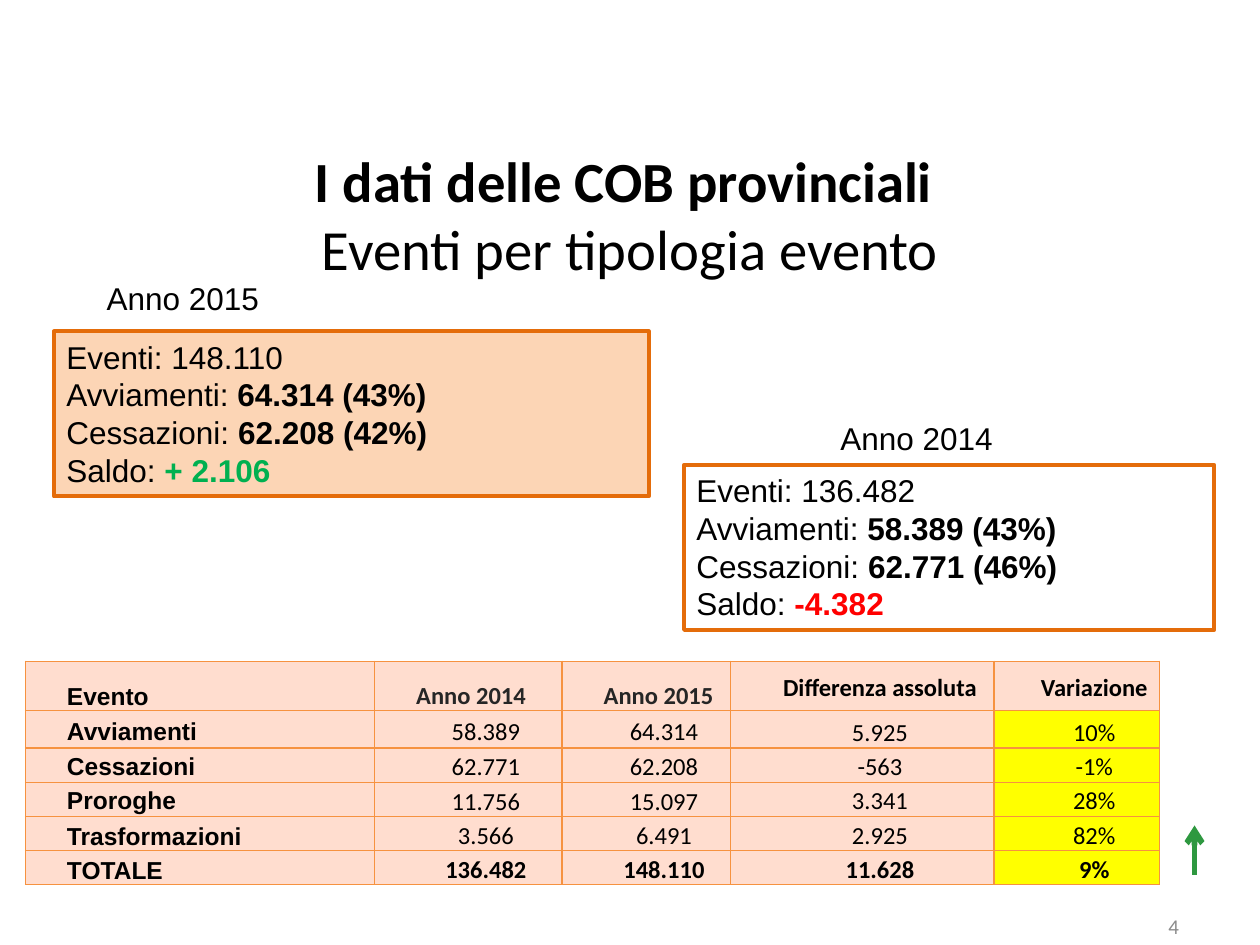
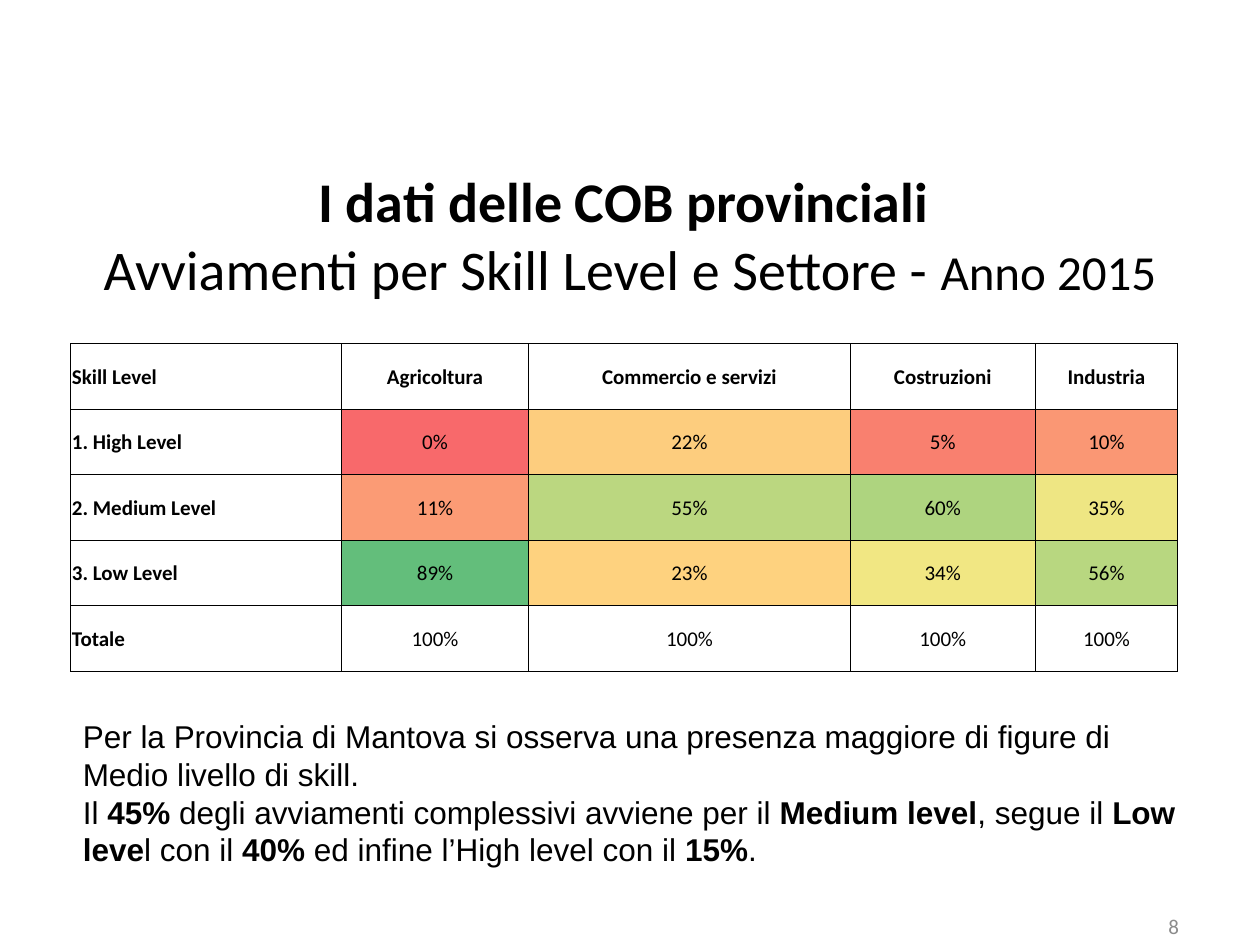
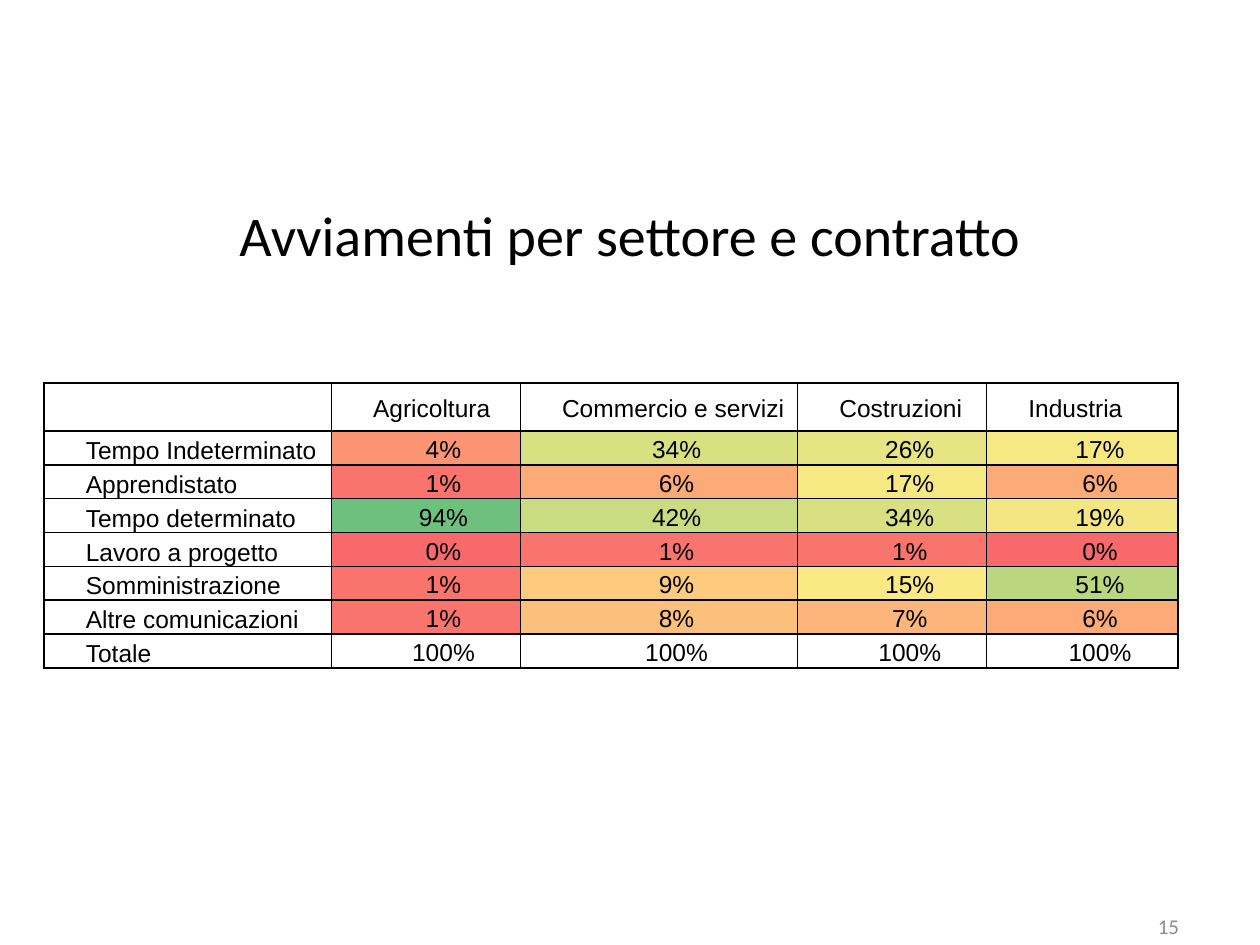
from dataclasses import dataclass, field
from typing import Any, Callable, NamedTuple

from lxml.etree import SubElement
from pptx import Presentation
from pptx.dml.color import RGBColor
from pptx.enum.shapes import MSO_CONNECTOR, MSO_SHAPE
from pptx.enum.text import MSO_ANCHOR, PP_ALIGN
from pptx.oxml.ns import qn
from pptx.util import Cm, Pt

BLACK = RGBColor(0x00, 0x00, 0x00)
WHITE = RGBColor(0xFF, 0xFF, 0xFF)
CHARCOAL = RGBColor(0x26, 0x26, 0x26)
GREY = RGBColor(0x8C, 0x8C, 0x8C)
ORANGE = RGBColor(0xE4, 0x6C, 0x0A)
ORANGE_EDGE = RGBColor(0xF6, 0x92, 0x40)
PEACH = RGBColor(0xFC, 0xD5, 0xB5)
PALE_PEACH = RGBColor(0xFF, 0xDD, 0xCF)
BRIGHT_YELLOW = RGBColor(0xFF, 0xFF, 0x00)
GAIN = RGBColor(0x00, 0xB0, 0x50)
LOSS = RGBColor(0xFF, 0x00, 0x00)
ARROW_GREEN = RGBColor(0x2E, 0x98, 0x40)
HEAT_LOW = RGBColor(0xF8, 0x69, 0x6B)
HEAT_MID = RGBColor(0xFF, 0xEB, 0x84)
HEAT_HIGH = RGBColor(0x63, 0xBE, 0x7B)

HEADING = "Calibri"
BODY = "Arial"
COMMON_TITLE = "I dati delle COB provinciali "
SECTORS = ["Agricoltura", "Commercio e servizi", "Costruzioni", "Industria"]


class Span(NamedTuple):
    """A stretch of text with its own weight, colour and size."""

    text: str
    bold: bool = False
    color: RGBColor = BLACK
    size: float = 18


class Frame(NamedTuple):
    """A place on the slide in centimetres."""

    left: float
    top: float
    width: float
    height: float


@dataclass(frozen=True)
class CellLook:
    """The formatting of one table cell."""

    fill: RGBColor = WHITE
    font: str = BODY
    bold: bool = False
    color: RGBColor = BLACK
    align: PP_ALIGN = PP_ALIGN.CENTER
    anchor: MSO_ANCHOR = MSO_ANCHOR.MIDDLE


@dataclass(frozen=True)
class Grid:
    """A table's place, measures and contents."""

    left: float
    top: float
    widths: list[float]
    heights: list[float]
    rows: list[list[str]]
    edge: RGBColor
    edge_width: float
    size: float = 14
    indent: float = 0.71
    spacing: float = 1.15
    margins: dict[str, Any] = field(default_factory=lambda: {
        "margin_left": Cm(0.13), "margin_right": Cm(0.13), "margin_top": 0, "margin_bottom": 0})


@dataclass(frozen=True)
class YearSummary:
    """The yearly figures shown in a framed box under a caption."""

    caption: str
    caption_at: Frame
    box_at: Frame
    fill: RGBColor
    events: str
    hires: str
    exits: str
    balance: Span


def apply(target: Any, values: dict[str, Any]) -> None:
    """Set every attribute named in values on target."""
    for name, value in values.items():
        setattr(target, name, value)


def write_spans(paragraph: Any, spans: list[Span], font: str) -> None:
    """Append the spans to a paragraph."""
    for span in spans:
        run = paragraph.add_run()
        run.text = span.text
        apply(run.font, {"name": font, "size": Pt(span.size), "bold": span.bold})
        run.font.color.rgb = span.color


def write_paragraphs(text_frame: Any, paragraphs: list[list[Span]], font: str = BODY,
                     align: PP_ALIGN = PP_ALIGN.LEFT, anchor: MSO_ANCHOR = MSO_ANCHOR.TOP) -> None:
    """Fill a text frame with paragraphs of spans."""
    apply(text_frame, {"word_wrap": True, "vertical_anchor": anchor})
    for index, spans in enumerate(paragraphs):
        paragraph = text_frame.add_paragraph() if index else text_frame.paragraphs[0]
        paragraph.alignment = align
        write_spans(paragraph, spans, font)


def add_text(slide: Any, at: Frame, paragraphs: list[list[Span]], **layout: Any) -> Any:
    """Place a text box and return its text frame."""
    text_frame = slide.shapes.add_textbox(*map(Cm, at)).text_frame
    write_paragraphs(text_frame, paragraphs, **layout)
    return text_frame


def add_title(slide: Any, lines: list[list[Span]], height: float = 3.2) -> None:
    """Place the centred title, its lines parted by line breaks."""
    text_frame = add_text(slide, Frame(1.27, 3.12, 22.86, height), [lines[0]], font=HEADING,
                          align=PP_ALIGN.CENTER, anchor=MSO_ANCHOR.MIDDLE)
    for spans in lines[1:]:
        text_frame.paragraphs[0].add_line_break()
        write_spans(text_frame.paragraphs[0], spans, HEADING)


def add_page_number(slide: Any, number: int) -> None:
    """Place the page number at the lower right."""
    add_text(slide, Frame(20.9, 18.31, 3.12, 0.74), [[Span(str(number), color=GREY, size=12)]],
             font=HEADING, align=PP_ALIGN.RIGHT, anchor=MSO_ANCHOR.MIDDLE)


def add_edges(cell: Any, color: RGBColor, width: float) -> None:
    """Draw the four borders of a cell."""
    properties = cell._tc.get_or_add_tcPr()
    for side in ("a:lnL", "a:lnR", "a:lnT", "a:lnB"):
        line = SubElement(properties, qn(side), w=str(Pt(width)))
        SubElement(SubElement(line, qn("a:solidFill")), qn("a:srgbClr"), val=str(color))


def add_grid(slide: Any, grid: Grid, look_at: Callable[[int, int], CellLook]) -> None:
    """Draw a table whose cells look as look_at tells."""
    table = slide.shapes.add_table(
        len(grid.heights), len(grid.widths), Cm(grid.left), Cm(grid.top),
        Cm(sum(grid.widths)), Cm(sum(grid.heights))).table
    apply(table, {"first_row": False, "horz_banding": False})
    for column, width in zip(table.columns, grid.widths):
        column.width = Cm(width)
    for row, height in zip(table.rows, grid.heights):
        row.height = Cm(height)
    for row_index, texts in enumerate(grid.rows):
        for column_index, text in enumerate(texts):
            cell = table.cell(row_index, column_index)
            look = look_at(row_index, column_index)
            add_edges(cell, grid.edge, grid.edge_width)
            cell.fill.solid()
            cell.fill.fore_color.rgb = look.fill
            apply(cell, {**grid.margins, "vertical_anchor": look.anchor})
            paragraph = cell.text_frame.paragraphs[0]
            apply(paragraph, {"alignment": look.align, "line_spacing": grid.spacing})
            paragraph._p.get_or_add_pPr().set("indent", str(Cm(grid.indent)))
            if text:
                write_spans(paragraph, [Span(text, look.bold, look.color, grid.size)], look.font)


def percent(text: str) -> int:
    """Read a percentage as a number."""
    return int(text.rstrip("%"))


def heat_scale(rows: list[list[str]]) -> Callable[[str], RGBColor]:
    """Return a red, yellow and green scale centred on the median of the rows."""
    values = sorted(percent(text) for row in rows for text in row[1:])
    low, high = values[0], values[-1]
    middle = (values[(len(values) - 1) // 2] + values[len(values) // 2]) / 2

    def shade(text: str) -> RGBColor:
        """Blend the two scale colours around a value."""
        value = percent(text)
        if value < middle:
            start, end, share = HEAT_LOW, HEAT_MID, (value - low) / (middle - low)
        else:
            start, end, share = HEAT_MID, HEAT_HIGH, (value - middle) / (high - middle)
        return RGBColor(*(round(a + (b - a) * share) for a, b in zip(start, end)))

    return shade


def add_year_summary(slide: Any, year: YearSummary) -> None:
    """Draw the framed figures of a year and their caption."""
    box = slide.shapes.add_shape(MSO_SHAPE.RECTANGLE, *map(Cm, year.box_at))
    box.shadow.inherit = False
    box.fill.solid()
    box.fill.fore_color.rgb = year.fill
    box.line.color.rgb = ORANGE
    box.line.width = Pt(2.25)
    write_paragraphs(box.text_frame, [
        [Span(f"Eventi: {year.events}")],
        [Span("Avviamenti: "), Span(year.hires, True)],
        [Span("Cessazioni: "), Span(year.exits, True)],
        [Span("Saldo: "), year.balance],
    ])
    add_text(slide, year.caption_at, [[Span(year.caption)]])


def add_growth_arrow(slide: Any) -> None:
    """Draw the upward arrow beside the total."""
    arrow = slide.shapes.add_connector(
        MSO_CONNECTOR.STRAIGHT, Cm(24.08), Cm(17.63), Cm(24.08), Cm(16.64))
    arrow.line.color.rgb = ARROW_GREEN
    arrow.line.width = Pt(3.25)
    SubElement(arrow.line._get_or_add_ln(), qn("a:tailEnd"), type="arrow")
    SubElement(arrow._element.spPr, qn("a:effectLst"))


def build_events(slide: Any) -> None:
    """Build the slide on events by type."""
    add_title(slide, [[Span(COMMON_TITLE, True, size=32.4)],
                      [Span("Eventi per tipologia evento", size=32.4)]], height=2.39)
    grid = Grid(0.51, 13.33, [7.04, 3.78, 3.4, 5.31, 3.33], [1, 0.75] + [0.69] * 4, [
        ["Evento", "Anno 2014", "Anno 2015", "Differenza assoluta", "Variazione"],
        ["Avviamenti", "58.389", "64.314", "5.925", "10%"],
        ["Cessazioni", "62.771", "62.208", "-563", "-1%"],
        ["Proroghe", "11.756", "15.097", "3.341", "28%"],
        ["Trasformazioni", "3.566", "6.491", "2.925", "82%"],
        ["TOTALE", "136.482", "148.110", "11.628", "9%"],
    ], ORANGE_EDGE, 0.75)
    total_row = len(grid.rows) - 1

    def look_at(row: int, column: int) -> CellLook:
        """Tell the look of an event cell."""
        header, label, year = row == 0, column == 0, column in (1, 2)
        low = (column < 3) if header else (column > 2 or label and row >= total_row - 1)
        return CellLook(
            fill=BRIGHT_YELLOW if column == 4 and not header else PALE_PEACH,
            font=BODY if label else HEADING,
            bold=header or label or row == total_row,
            color=CHARCOAL if header and year else BLACK,
            align=PP_ALIGN.LEFT if label or header and year else PP_ALIGN.CENTER,
            anchor=MSO_ANCHOR.BOTTOM if low else MSO_ANCHOR.MIDDLE)

    add_grid(slide, grid, look_at)
    add_growth_arrow(slide)
    for year in (
        YearSummary("Anno 2014", Frame(16.69, 8.33, 4.19, 1.02), Frame(13.79, 9.37, 10.69, 3.33),
                    WHITE, "136.482", "58.389 (43%)", "62.771 (46%)", Span("-4.382", True, LOSS)),
        YearSummary("Anno 2015", Frame(1.9, 5.51, 4.19, 1.02), Frame(1.09, 6.68, 11.99, 3.33),
                    PEACH, "148.110", "64.314 (43%)", "62.208 (42%)", Span("+ 2.106", True, GAIN)),
    ):
        add_year_summary(slide, year)


def build_skills(slide: Any) -> None:
    """Build the slide on skill levels by sector."""
    add_title(slide, [[Span(COMMON_TITLE, True, size=32)],
                      [Span("Avviamenti per Skill Level e Settore - ", size=32),
                       Span("Anno 2015", size=28)]])
    add_text(slide, Frame(1.42, 14.33, 22.81, 3.33), [
        [Span("Per la Provincia di Mantova si osserva una presenza maggiore di figure di "
              "Medio livello di skill.")],
        [Span("Il "), Span("45% ", True), Span("degli avviamenti complessivi avviene per il "),
         Span("Medium level", True), Span(", segue il "), Span("Low leve", True),
         Span("l con il "), Span("40%", True), Span(" ed infine l’High level con il "),
         Span("15%", True), Span(".")],
    ])
    grid = Grid(1.42, 6.93, [5.46, 3.78, 6.48, 3.73, 2.87], [1.32] * 5, [
        ["Skill Level", *SECTORS],
        ["1. High Level", "0%", "22%", "5%", "10%"],
        ["2. Medium Level", "11%", "55%", "60%", "35%"],
        ["3. Low Level", "89%", "23%", "34%", "56%"],
        ["Totale"] + ["100%"] * 4,
    ], BLACK, 0.5, size=12, indent=0, spacing=1.0, margins={
        "margin_left": Cm(0.03), "margin_right": Cm(0.03), "margin_top": Cm(0.03),
        "margin_bottom": 0})
    shade = heat_scale(grid.rows[1:-1])

    def look_at(row: int, column: int) -> CellLook:
        """Tell the look of a skill cell."""
        heated = column > 0 and 0 < row < len(grid.rows) - 1
        return CellLook(
            fill=shade(grid.rows[row][column]) if heated else WHITE,
            font=HEADING,
            bold=row == 0 or column == 0,
            align=PP_ALIGN.CENTER if column else PP_ALIGN.LEFT)

    add_grid(slide, grid, look_at)


def build_contracts(slide: Any) -> None:
    """Build the slide on contracts by sector."""
    add_title(slide, [[Span("Avviamenti per settore e contratto", size=32)]])
    grid = Grid(0.89, 7.72, [5.79, 3.81, 5.59, 3.81, 3.86], [0.97] + [0.64] * 7, [
        ["", *SECTORS],
        ["Tempo Indeterminato", "4%", "34%", "26%", "17%"],
        ["Apprendistato", "1%", "6%", "17%", "6%"],
        ["Tempo determinato", "94%", "42%", "34%", "19%"],
        ["Lavoro a progetto", "0%", "1%", "1%", "0%"],
        ["Somministrazione", "1%", "9%", "15%", "51%"],
        ["Altre comunicazioni", "1%", "8%", "7%", "6%"],
        ["Totale"] + ["100%"] * 4,
    ], BLACK, 1)
    shade = heat_scale(grid.rows[1:])

    def look_at(row: int, column: int) -> CellLook:
        """Tell the look of a contract cell."""
        heated = column > 0 and 0 < row < len(grid.rows) - 1
        return CellLook(
            fill=shade(grid.rows[row][column]) if heated else WHITE,
            align=PP_ALIGN.CENTER if row and column else PP_ALIGN.LEFT,
            anchor=MSO_ANCHOR.BOTTOM if row and not column else MSO_ANCHOR.MIDDLE)

    add_grid(slide, grid, look_at)


def main() -> None:
    """Build and save the three slides."""
    presentation = Presentation()
    apply(presentation, {"slide_width": Cm(25.4), "slide_height": Cm(19.05)})
    for number, build in ((4, build_events), (8, build_skills), (15, build_contracts)):
        slide = presentation.slides.add_slide(presentation.slide_layouts[6])
        build(slide)
        add_page_number(slide, number)
    presentation.save("out.pptx")


if __name__ == "__main__":
    main()
